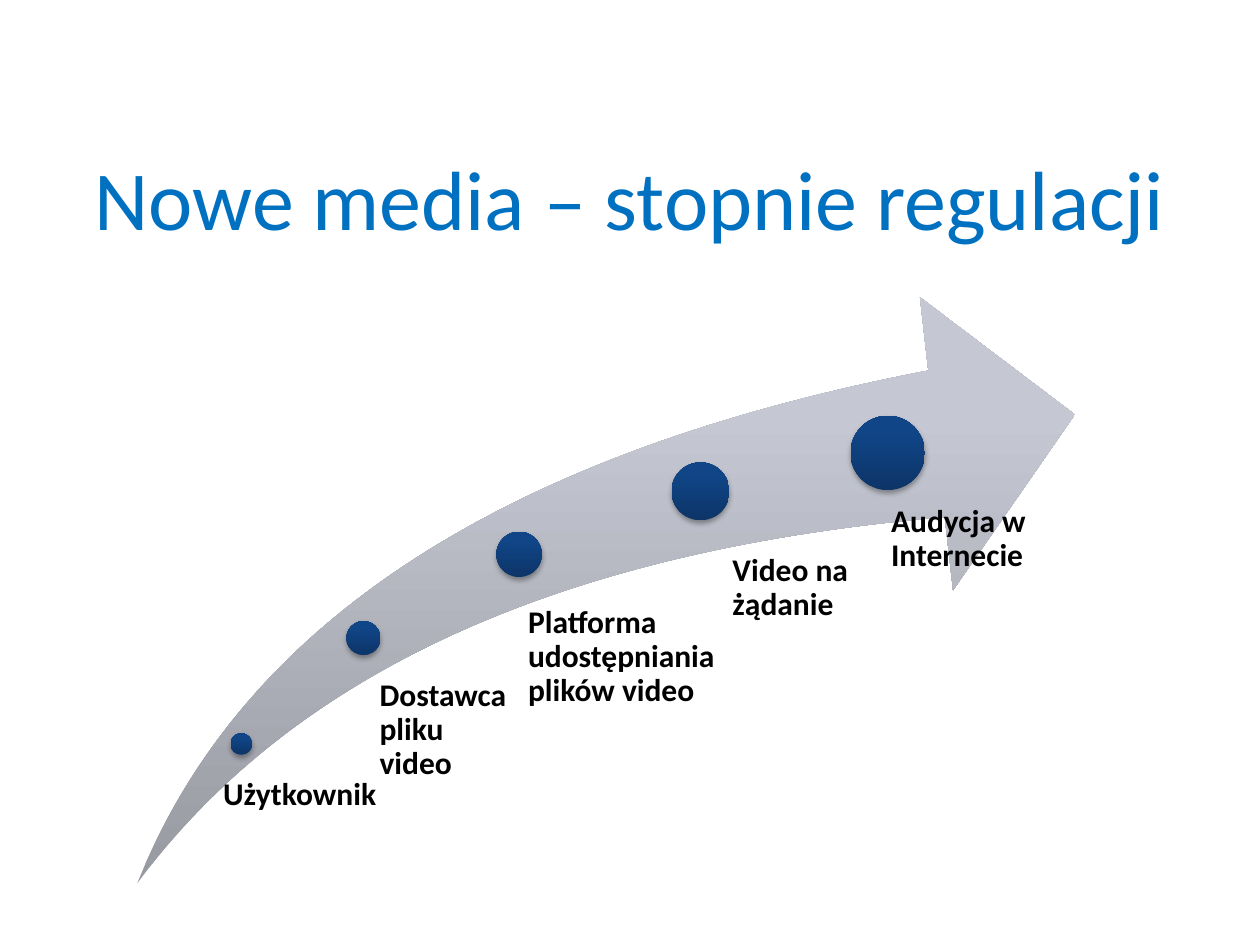
from copy import deepcopy
from dataclasses import dataclass

from lxml.etree import SubElement
from pptx import Presentation
from pptx.dml.color import RGBColor
from pptx.enum.shapes import MSO_SHAPE
from pptx.enum.text import MSO_ANCHOR, PP_ALIGN
from pptx.oxml.ns import qn
from pptx.shapes.autoshape import Shape
from pptx.shapes.shapetree import GroupShapes, SlideShapes
from pptx.util import Inches, Length, Pt

Gradient = tuple[tuple[float, str], ...]


@dataclass(frozen=True)
class Theme:
    font: str = "Calibri"
    title_size: int = 48
    label_size: int = 18
    title_color: str = "0070C0"
    label_color: str = "000000"
    shadow_color: str = "000000"
    arrow: Gradient = ((0, "989AA2"), (0.8, "C5C8D2"), (1, "C5C9D3"))
    dot: Gradient = ((0, "0D3568"), (0.8, "104587"), (1, "0E458A"))


@dataclass(frozen=True)
class Box:
    column: float
    row: float
    columns: float
    rows: float

    def lengths(self) -> tuple[Length, ...]:
        return tuple(grid(cells) for cells in (self.column, self.row, self.columns, self.rows))


@dataclass(frozen=True)
class Stage:
    label: str
    dot_column: float
    dot_row: float
    diameter: float
    label_box: Box


THEME = Theme()
CELLS_PER_INCH = 10
SLIDE_COLUMNS, SLIDE_ROWS = 100, 75
INDENT_SHARE = 0.53
TITLE_BOX = Box(5, 9.9, 90, 11.5)
ARROW_BOX = Box(10.9, 23.6, 74.4, 46.5)
STAGES = (
    Stage("Użytkownik", 18.3, 58.2, 1.7, Box(16.8, 61.8, 14.5, 5.6)),
    Stage("Dostawca pliku video", 27.5, 49.3, 2.7, Box(28.7, 53.9, 12.7, 13)),
    Stage("Platforma udostępniania plików video", 39.4, 42.2, 3.6, Box(40, 48.1, 16.8, 18)),
    Stage("Video na żądanie", 53.3, 36.7, 4.6, Box(55.7, 44, 14.6, 21.1)),
    Stage("Audycja w Internecie", 67.5, 33, 5.9, Box(67.6, 40.1, 20.6, 25.8)),
)


def grid(cells: float) -> Length:
    return Inches(cells / CELLS_PER_INCH)


def add_gradient_shape(shapes: GroupShapes, preset: MSO_SHAPE, box: Box, gradient: Gradient) -> Shape:
    shape = shapes.add_shape(preset, *box.lengths())
    shape.shadow.inherit = False
    shape.line.fill.background()
    shape.fill.gradient()
    shape.fill.gradient_angle = 90
    stop_list = shape.element.spPr.find(".//" + qn("a:gsLst"))
    stop_list.append(deepcopy(stop_list[-1]))
    for stop, (position, color) in zip(shape.fill.gradient_stops, gradient):
        stop.position = position
        stop.color.rgb = RGBColor.from_string(color)
    return shape


def add_soft_shadow(shape: Shape) -> None:
    effects = shape.element.spPr.find(qn("a:effectLst"))
    shadow = SubElement(effects, qn("a:outerShdw"), blurRad=str(int(Pt(3.1))),
                        dist=str(int(Pt(1.8))), dir="5400000", rotWithShape="0")
    color = SubElement(shadow, qn("a:srgbClr"), val=THEME.shadow_color)
    SubElement(color, qn("a:alpha"), val="35000")


def add_text(shapes: SlideShapes | GroupShapes, text: str, box: Box, size: int, color: str) -> Shape:
    text_box = shapes.add_textbox(*box.lengths())
    text_box.text_frame.word_wrap = True
    paragraph = text_box.text_frame.paragraphs[0]
    paragraph.text = text
    paragraph.font.name = THEME.font
    paragraph.font.size = Pt(size)
    paragraph.font.color.rgb = RGBColor.from_string(color)
    return text_box


def add_stage(shapes: GroupShapes, stage: Stage) -> None:
    dot_box = Box(stage.dot_column, stage.dot_row, stage.diameter, stage.diameter)
    add_soft_shadow(add_gradient_shape(shapes, MSO_SHAPE.OVAL, dot_box, THEME.dot))
    frame = add_text(shapes, stage.label, stage.label_box, THEME.label_size, THEME.label_color).text_frame
    frame.margin_left = grid(stage.diameter * INDENT_SHARE)
    frame.margin_top = frame.margin_right = frame.margin_bottom = 0
    paragraph = frame.paragraphs[0]
    paragraph.line_spacing = 0.9
    paragraph.font.bold = True


def main() -> None:
    """Build the slide on the stages of new media regulation."""
    presentation = Presentation()
    presentation.slide_width = grid(SLIDE_COLUMNS)
    presentation.slide_height = grid(SLIDE_ROWS)
    slide = presentation.slides.add_slide(presentation.slide_layouts[6])

    title = add_text(slide.shapes, "Nowe media – stopnie regulacji", TITLE_BOX,
                     THEME.title_size, THEME.title_color).text_frame
    title.vertical_anchor = MSO_ANCHOR.MIDDLE
    title.paragraphs[0].alignment = PP_ALIGN.CENTER

    diagram = slide.shapes.add_group_shape().shapes
    arrow = add_gradient_shape(diagram, MSO_SHAPE.SWOOSH_ARROW, ARROW_BOX, THEME.arrow)
    arrow.adjustments[0] = arrow.adjustments[1] = 0.25
    for stage in STAGES:
        add_stage(diagram, stage)

    presentation.save("out.pptx")


if __name__ == "__main__":
    main()
